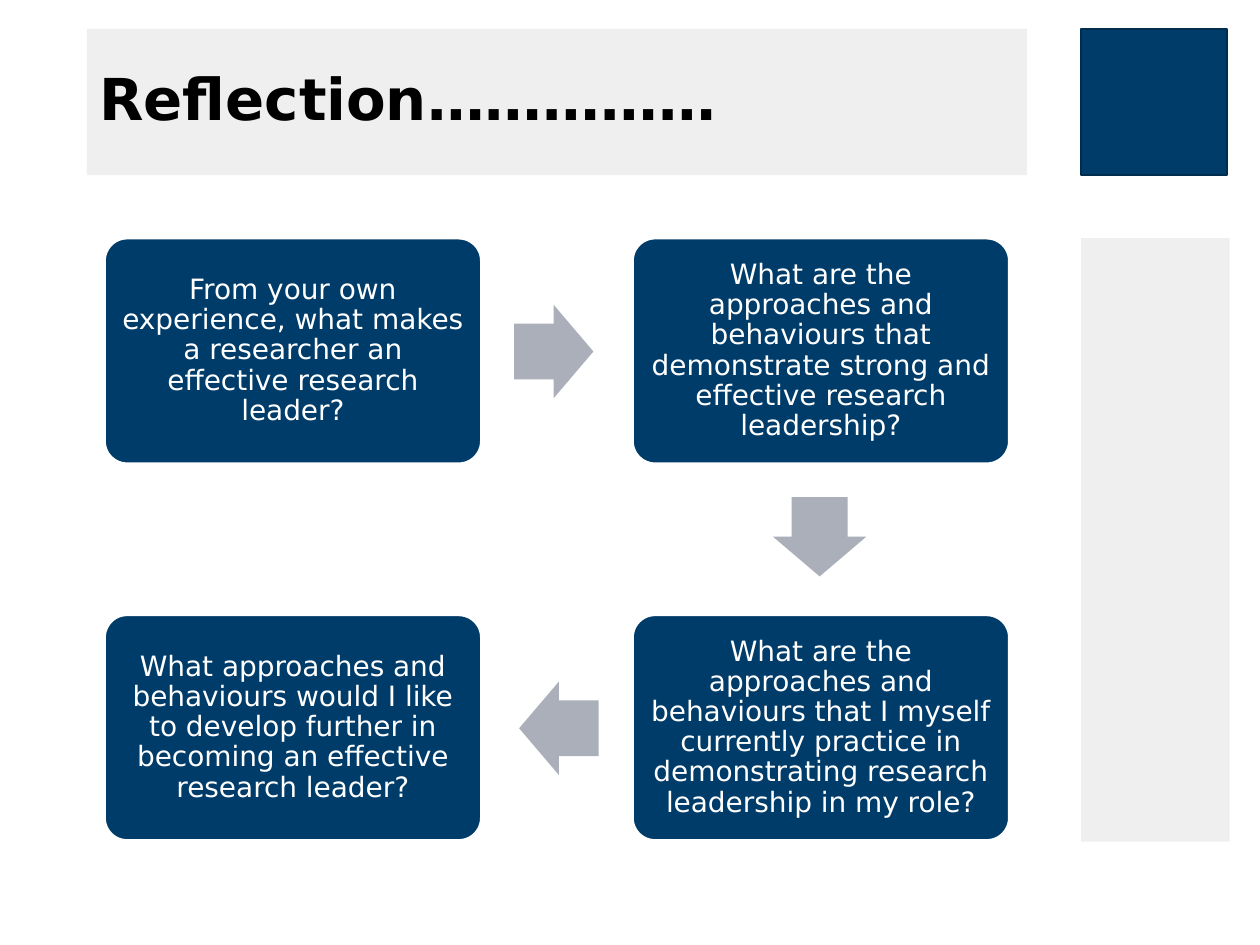
from dataclasses import dataclass

from pptx import Presentation as Deck
from pptx.dml.color import RGBColor as Rgb
from pptx.enum.shapes import MSO_SHAPE as Kind
from pptx.enum.text import MSO_ANCHOR as Anchor, PP_ALIGN as Align
from pptx.util import Inches, Pt


@dataclass(frozen=True)
class Theme:
    font: str = "DejaVu Sans"
    navy: str = "003C69"
    edge: str = "002C4E"
    pale: str = "EFEFF0"
    grey: str = "ABAFB9"
    white: str = "FFFFFF"
    black: str = "000000"
    head: int = 33
    body: int = 16


class Pen:
    def __init__(self, slide, theme):
        self.slide = slide
        self.theme = theme

    def shape(self, kind, box, fill, line=None, width=1):
        item = self.slide.shapes.add_shape(kind, *map(Inches, box))
        item.shadow.inherit = False
        item.fill.solid()
        item.fill.fore_color.rgb = Rgb.from_string(fill)
        if line:
            item.line.color.rgb = Rgb.from_string(line)
            item.line.width = Pt(width)
        else:
            item.line.fill.background()
        return item

    def label(self, item, text, size, color, align, bold=False):
        frame = item.text_frame
        frame.text = text
        frame.word_wrap = True
        frame.vertical_anchor = Anchor.MIDDLE
        para = frame.paragraphs[0]
        para.alignment = align
        para.line_spacing = 0.9
        font = para.runs[0].font
        font.name = self.theme.font
        font.size = Pt(size)
        font.bold = bold
        font.color.rgb = Rgb.from_string(color)

    def panel(self, box, fill, line=None):
        return self.shape(Kind.RECTANGLE, box, fill, line)

    def title(self, box, text):
        look = self.theme
        item = self.panel(box, look.pale)
        self.label(item, text, look.head, look.black, Align.LEFT, True)

    def card(self, box, text):
        look = self.theme
        item = self.shape(Kind.ROUNDED_RECTANGLE, box, look.navy, look.white, 1.5)
        item.adjustments[0] = 0.1
        frame = item.text_frame
        frame.margin_left = frame.margin_right = Inches(0.07)
        frame.margin_top = frame.margin_bottom = Inches(0.07)
        self.label(item, text, look.body, look.white, Align.CENTER)

    def arrow(self, left, top, turn):
        item = self.shape(Kind.RIGHT_ARROW, (left, top, 0.63, 0.74), self.theme.grey)
        item.adjustments[0] = 0.6
        item.adjustments[1] = 0.5
        item.rotation = turn


LEFT, RIGHT = 0.83, 5.02
TOP, LOW = 1.89, 4.88
CARDS = [
    (LEFT, TOP, "From your own experience, what makes a researcher an "
     "effective research leader?"),
    (RIGHT, TOP, "What are the approaches and behaviours that demonstrate "
     "strong and effective research leadership?"),
    (RIGHT, LOW, "What are the approaches and behaviours that I myself "
     "currently practice in demonstrating research leadership in my role?"),
    (LEFT, LOW, "What approaches and behaviours would I like to develop "
     "further in becoming an effective research leader?"),
]
ARROWS = [(4.08, 2.42, 0), (6.19, 3.89, 90), (4.12, 5.41, 180)]


def main():
    deck = Deck()
    deck.slide_width = Inches(10)
    deck.slide_height = Inches(7.5)
    look = Theme()
    pen = Pen(deck.slides.add_slide(deck.slide_layouts[6]), look)
    pen.panel((8.58, 1.89, 1.18, 4.79), look.pale)
    pen.panel((8.58, 0.23, 1.16, 1.16), look.navy, look.edge)
    pen.title((0.69, 0.23, 7.46, 1.16), "Reflection……………")
    for left, top, text in CARDS:
        pen.card((left, top, 2.99, 1.79), text)
    for left, top, turn in ARROWS:
        pen.arrow(left, top, turn)
    deck.save("out.pptx")


if __name__ == "__main__":
    main()
